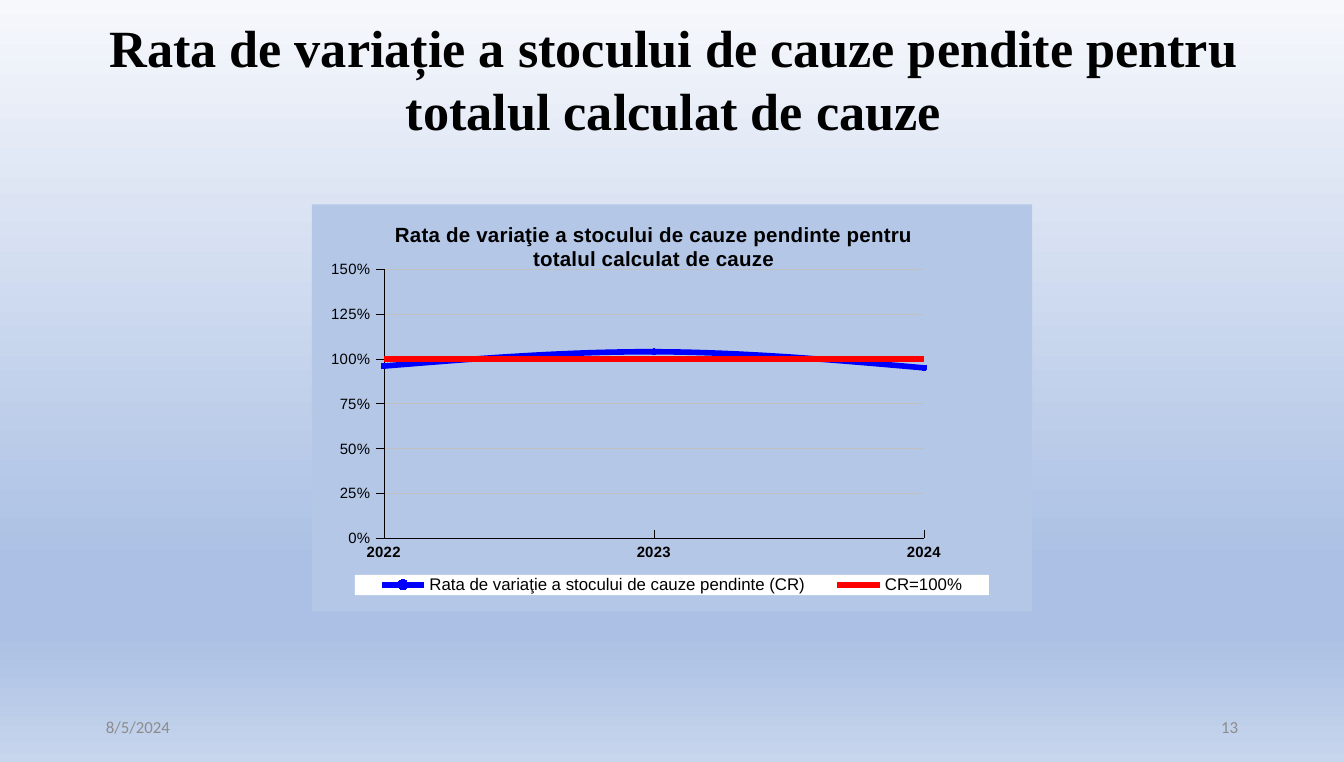
"""Build a slide with a line chart of the clearance rate of pending cases."""
from lxml.etree import SubElement
from pptx import Presentation
from pptx.chart.data import CategoryChartData
from pptx.dml.color import RGBColor
from pptx.enum.chart import XL_CHART_TYPE, XL_LEGEND_POSITION, XL_MARKER_STYLE, XL_TICK_MARK
from pptx.enum.text import MSO_ANCHOR, PP_ALIGN
from pptx.oxml import parse_xml
from pptx.oxml.ns import nsdecls, qn
from pptx.util import Inches, Pt

WIDTH, HEIGHT = 10, 5.67
GRADIENT = [(0, "F6F8FC"), (74, "ABC0E4"), (83, "ABC0E4"), (100, "C7D5ED")]
BLACK, GRAY, PANEL = "000000", "8C8C8C", "B4C7E7"
TITLE_FONT = {"name": "Times New Roman", "size": 28, "bold": True, "color": BLACK}
FOOTER_FONT = {"name": "Calibri", "size": 9, "color": GRAY}
TEXTS = [
    ("Rata de variație a stocului de cauze pendite pentru totalul calculat de cauze",
     (0.51, 0.11, 9, 0.94), PP_ALIGN.CENTER, TITLE_FONT, -0.39),
    ("8/5/2024", (0.69, 5.26, 2.25, 0.3), PP_ALIGN.LEFT, FOOTER_FONT, 0),
    ("13", (7.06, 5.26, 2.25, 0.3), PP_ALIGN.RIGHT, FOOTER_FONT, 0),
]
CHART_BOX = (2.32, 1.52, 5.36, 3.03)
CHART_TITLE = "Rata de variaţie a stocului de cauze pendinte pentru totalul calculat de cauze"
YEARS = ["2022", "2023", "2024"]
SERIES = [
    {"name": "Rata de variaţie a stocului de cauze pendinte (CR)",
     "values": [0.96, 1.04, 0.95], "color": "0000FF", "smooth": True,
     "marker": XL_MARKER_STYLE.CIRCLE},
    {"name": "CR=100%", "values": [1, 1, 1], "color": "FF0000", "smooth": False,
     "marker": XL_MARKER_STYLE.NONE},
]
VALUE_AXIS = {"minimum_scale": 0, "maximum_scale": 1.5, "major_unit": 0.25,
              "has_major_gridlines": True, "major_tick_mark": XL_TICK_MARK.OUTSIDE}
CATEGORY_AXIS = {"major_tick_mark": XL_TICK_MARK.INSIDE}
LAYOUTS = [
    ("c:title", 1, {"x": 0.11, "y": 0.03}),
    ("c:plotArea", 0, {"x": 0.1, "y": 0.16, "w": 0.75, "h": 0.66}),
    ("c:legend", 1, {"x": 0.06, "y": 0.91, "w": 0.88, "h": 0.05}),
]


def rgb(color):
    """Turn a hex string into a colour."""
    return RGBColor.from_string(color)


def set_attributes(target, values):
    """Set every attribute named in a dict."""
    for name, value in values.items():
        setattr(target, name, value)


def style_font(font, size, color=BLACK, name="Arial", bold=False):
    """Apply one text format."""
    set_attributes(font, {"size": Pt(size), "name": name, "bold": bold})
    font.color.rgb = rgb(color)


def style_line(line, color, width):
    """Apply one line format."""
    line.color.rgb = rgb(color)
    line.width = Pt(width)


def fill_background(slide):
    """Fill the slide with the vertical gradient."""
    slide.background.fill.gradient()
    gradient = slide.element.find(".//" + qn("a:gradFill"))
    stops = "".join(f'<a:gs pos="{share * 1000}"><a:srgbClr val="{color}"/></a:gs>'
                    for share, color in GRADIENT)
    gradient.getparent().replace(gradient, parse_xml(
        f'<a:gradFill {nsdecls("a")} rotWithShape="1"><a:gsLst>{stops}</a:gsLst>'
        '<a:lin ang="5400000" scaled="0"/></a:gradFill>'))


def add_text(slide, text, box, alignment, font, indent):
    """Add one wrapped, vertically centred text box."""
    frame = slide.shapes.add_textbox(*map(Inches, box)).text_frame
    set_attributes(frame, {"word_wrap": True, "vertical_anchor": MSO_ANCHOR.MIDDLE})
    paragraph = frame.paragraphs[0]
    paragraph.alignment = alignment
    if indent:
        properties = paragraph._p.get_or_add_pPr()
        properties.set("marL", "0")
        properties.set("indent", str(Inches(indent)))
    run = paragraph.add_run()
    run.text = text
    style_font(run.font, **font)


def solid_area(color):
    """Return chart shape properties with a plain fill and no outline."""
    return parse_xml(f'<c:spPr {nsdecls("c", "a")}><a:solidFill><a:srgbClr val="{color}"/>'
                     '</a:solidFill><a:ln><a:noFill/></a:ln></c:spPr>')


def place_part(part, index, position):
    """Give a chart part a manual layout."""
    for old in part.findall(qn("c:layout")):
        part.remove(old)
    layout = parse_xml(f'<c:layout {nsdecls("c")}><c:manualLayout/></c:layout>')
    settings = {"xMode": "edge", "yMode": "edge", **position}
    if part.tag == qn("c:plotArea"):
        settings = {"layoutTarget": "inner", **settings}
    for name, value in settings.items():
        SubElement(layout[0], qn("c:" + name)).set("val", str(value))
    part.insert(index, layout)


def style_axes(chart):
    """Format both axes and the gridlines."""
    for axis, values, bold in ((chart.category_axis, CATEGORY_AXIS, True),
                               (chart.value_axis, VALUE_AXIS, False)):
        set_attributes(axis, values)
        style_font(axis.tick_labels.font, 8, bold=bold)
        style_line(axis.format.line, BLACK, 0.25)
    value_axis = chart.value_axis
    set_attributes(value_axis.tick_labels,
                   {"number_format": "0%", "number_format_is_linked": False})
    style_line(value_axis.major_gridlines.format.line, "C0C0C0", 0.25)
    chart.element.find(".//" + qn("c:majorUnit")).addprevious(
        parse_xml(f'<c:crossBetween {nsdecls("c")} val="midCat"/>'))


def add_rate_chart(slide):
    """Add the line chart with its title and legend."""
    data = CategoryChartData(number_format="0%")
    data.categories = YEARS
    for entry in SERIES:
        data.add_series(entry["name"], entry["values"])
    chart = slide.shapes.add_chart(
        XL_CHART_TYPE.LINE_MARKERS, *map(Inches, CHART_BOX), data).chart
    style_font(chart.font, 8)
    run = chart.chart_title.text_frame.paragraphs[0].add_run()
    run.text = CHART_TITLE
    style_font(run.font, 11, bold=True)
    chart.has_legend = True
    set_attributes(chart.legend, {"position": XL_LEGEND_POSITION.BOTTOM,
                                  "include_in_layout": False})
    style_font(chart.legend.font, 9)
    style_axes(chart)
    chart.plots[0].vary_by_categories = False
    for series, entry in zip(chart.plots[0].series, SERIES):
        series.smooth = entry["smooth"]
        style_line(series.format.line, entry["color"], 3)
        set_attributes(series.marker, {"style": entry["marker"], "size": 3})
        series.marker.format.fill.solid()
        series.marker.format.fill.fore_color.rgb = rgb(entry["color"])
        series.marker.format.line.fill.background()
    root = chart.element.find(qn("c:chart"))
    for tag, index, position in LAYOUTS:
        place_part(root.find(qn(tag)), index, position)
    root.addnext(solid_area(PANEL))
    root.find(qn("c:plotArea")).append(solid_area(PANEL))
    root.find(qn("c:legend")).find(qn("c:overlay")).addnext(solid_area("FFFFFF"))


def main():
    """Build and save the presentation."""
    presentation = Presentation()
    set_attributes(presentation, {"slide_width": Inches(WIDTH), "slide_height": Inches(HEIGHT)})
    slide = presentation.slides.add_slide(presentation.slide_layouts[6])
    fill_background(slide)
    for item in TEXTS:
        add_text(slide, *item)
    add_rate_chart(slide)
    presentation.save("out.pptx")


if __name__ == "__main__":
    main()
